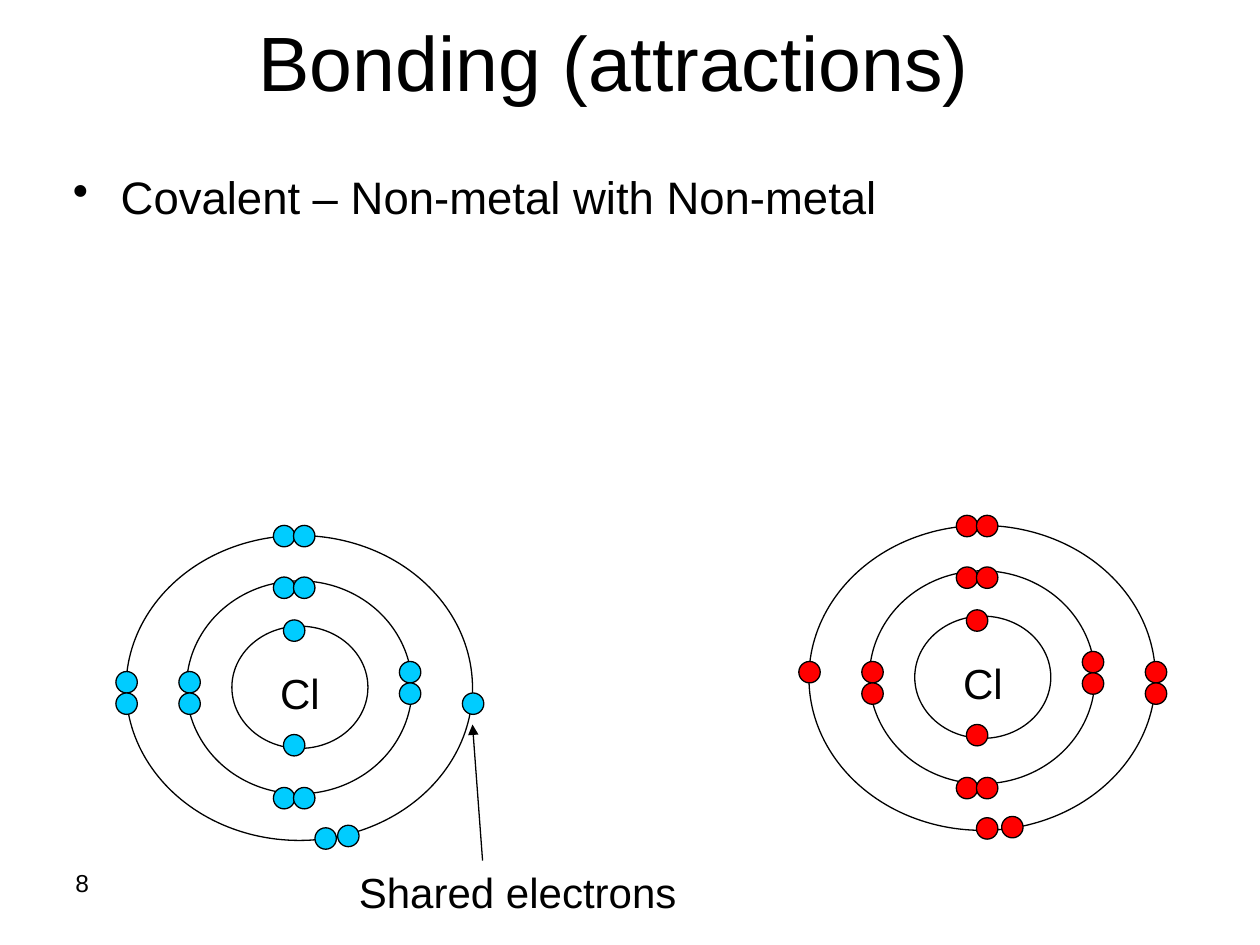
from lxml import etree
from pptx import Presentation
from pptx.dml.color import RGBColor
from pptx.enum.shapes import MSO_CONNECTOR, MSO_SHAPE
from pptx.enum.text import MSO_ANCHOR, PP_ALIGN
from pptx.oxml.ns import qn
from pptx.util import Inches, Pt

BLACK = RGBColor(0x00, 0x00, 0x00)
BLUE = RGBColor(0x00, 0xCC, 0xFF)
RED = RGBColor(0xFF, 0x00, 0x00)

ELECTRON_SIZE = 0.17
# Left, top, width and height of each shell, measured from the atom's corner
SHELLS = [(0, 0, 2.75, 2.42), (0.48, 0.36, 1.79, 1.69), (0.84, 0.72, 1.08, 0.97)]
INNER_ELECTRONS = [
    (1.25, 0.67), (1.25, 1.58),
    (1.17, 0.33), (1.33, 0.33), (0.42, 1.08), (0.42, 1.25),
    (1.17, 2), (1.33, 2), (2.17, 1), (2.17, 1.17),
]
TOP_PAIR = [(1.17, -0.08), (1.33, -0.08)]
ATOMS = [
    (1, 4.25, BLUE, [(-0.08, 1.08), (-0.08, 1.25), (1.5, 2.32), (1.68, 2.3), (2.67, 1.25)]),
    (6.42, 4.17, RED, [(-0.08, 1.08), (2.67, 1.08), (2.67, 1.25), (1.33, 2.32), (1.53, 2.31)]),
]


def add_text(shapes, text, left, top, width, height, size, align=PP_ALIGN.LEFT, wrap=True):
    box = shapes.add_textbox(Inches(left), Inches(top), Inches(width), Inches(height))
    frame = box.text_frame
    frame.word_wrap = wrap
    paragraph = frame.paragraphs[0]
    paragraph.text = text
    paragraph.alignment = align
    paragraph.font.name = "Arial"
    paragraph.font.size = Pt(size)
    paragraph.font.color.rgb = BLACK
    return frame


def add_ellipse(shapes, left, top, width, height, color=None):
    """Add an outlined ellipse, left unfilled when no color is given."""
    ellipse = shapes.add_shape(
        MSO_SHAPE.OVAL, Inches(left), Inches(top), Inches(width), Inches(height))
    ellipse.shadow.inherit = False
    ellipse.line.color.rgb = BLACK
    ellipse.line.width = Pt(0.75)
    if color is None:
        ellipse.fill.background()
    else:
        ellipse.fill.solid()
        ellipse.fill.fore_color.rgb = color


presentation = Presentation()
presentation.slide_width = Inches(10)
presentation.slide_height = Inches(7.5)
slide = presentation.slides.add_slide(presentation.slide_layouts[6])

add_text(slide.shapes, "8", 0.5, 6.84, 2.33, 0.52, 14)
title = add_text(slide.shapes, "Bonding (attractions)", 0.71, 0.13, 8.33, 0.7, 44, PP_ALIGN.CENTER)
title.vertical_anchor = MSO_ANCHOR.MIDDLE

body = add_text(slide.shapes, "Covalent – Non-metal with Non-metal", 0.48, 1.34, 8.67, 2.2, 26)
bullet_paragraph = body.paragraphs[0]
bullet_paragraph.line_spacing = 0.9
properties = bullet_paragraph._p.get_or_add_pPr()
properties.set("marL", str(Inches(0.38)))
properties.set("indent", str(Inches(-0.38)))
bullet = etree.Element(qn("a:buChar"), char="•")
properties.find(qn("a:defRPr")).addprevious(bullet)

add_text(slide.shapes, "Shared electrons", 2.75, 6.83, 2.75, 0.51, 24, wrap=False)
arrow = slide.shapes.add_connector(
    MSO_CONNECTOR.STRAIGHT, Inches(3.83), Inches(6.83), Inches(3.75), Inches(5.75))
arrow.line.color.rgb = BLACK
arrow.line.width = Pt(0.75)
etree.SubElement(arrow.line._get_or_add_ln(), qn("a:tailEnd"), type="triangle")
etree.SubElement(arrow._element.spPr, qn("a:effectLst"))

for atom_left, atom_top, color, outer_electrons in ATOMS:
    atom = slide.shapes.add_group_shape()
    for left, top, width, height in SHELLS:
        add_ellipse(atom.shapes, atom_left + left, atom_top + top, width, height)
    add_text(atom.shapes, "Cl", atom_left + 1.12, atom_top + 1, 0.52, 0.51, 24,
             PP_ALIGN.CENTER, wrap=False)
    for left, top in INNER_ELECTRONS + TOP_PAIR + outer_electrons:
        add_ellipse(atom.shapes, atom_left + left, atom_top + top,
                    ELECTRON_SIZE, ELECTRON_SIZE, color)

presentation.save("out.pptx")
